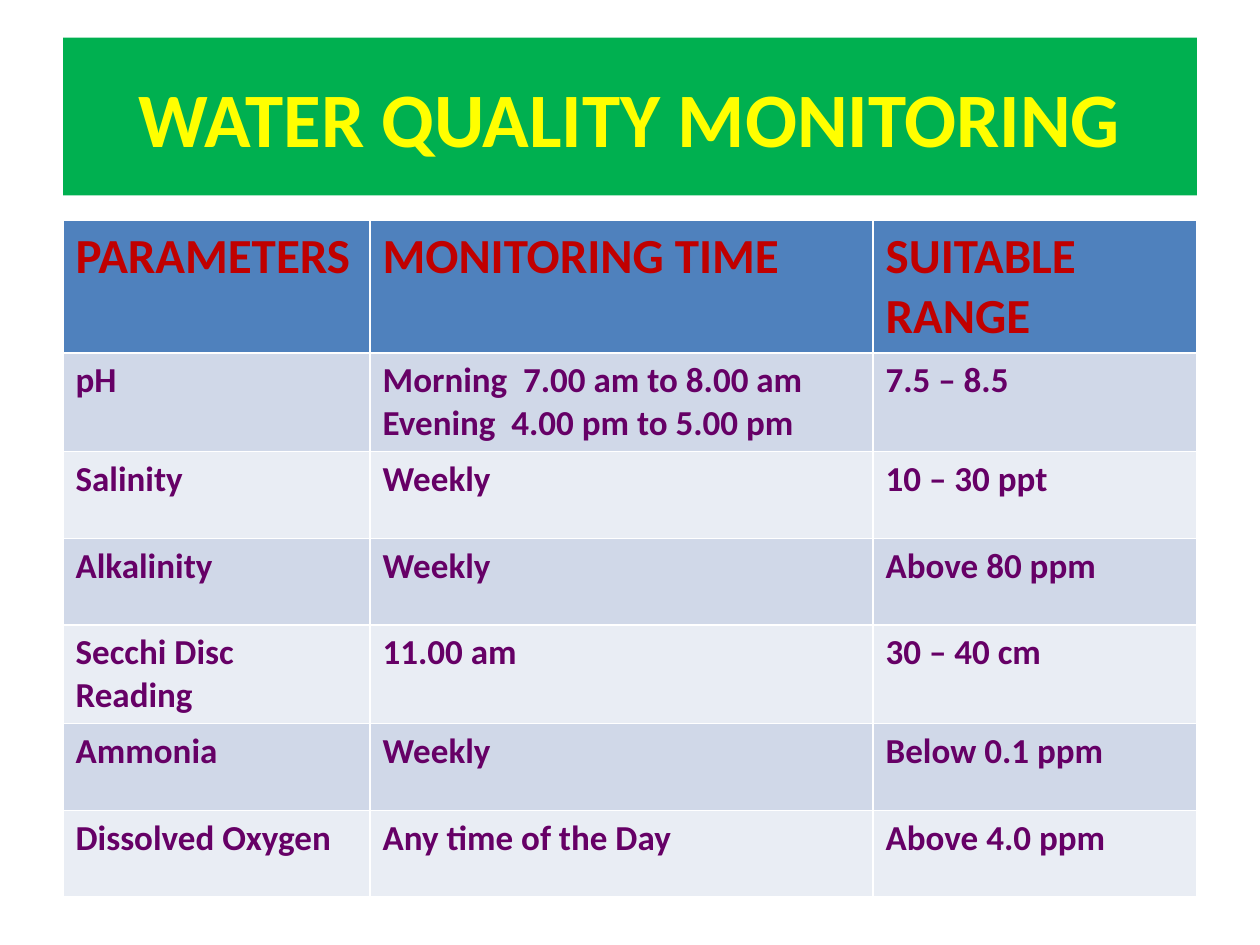
"""Build the water quality monitoring slide: a title band above a parameter table."""
from pptx import Presentation
from pptx.dml.color import RGBColor
from pptx.enum.text import MSO_ANCHOR, PP_ALIGN
from pptx.util import Cm, Pt

CENTER, MIDDLE = PP_ALIGN.CENTER, MSO_ANCHOR.MIDDLE
GREEN = RGBColor(0x00, 0xB0, 0x50)
YELLOW = RGBColor(0xFF, 0xFF, 0x00)
BLUE = RGBColor(0x4F, 0x81, 0xBD)
RED = RGBColor(0xC0, 0x00, 0x00)
PURPLE = RGBColor(0x66, 0x00, 0x66)
BANDS = [RGBColor(0xE9, 0xED, 0xF4), RGBColor(0xD0, 0xD8, 0xE8)]
FONT = "Calibri"

TITLE = "WATER QUALITY MONITORING"
ROWS = [
    ("PARAMETERS", "MONITORING TIME", "SUITABLE RANGE"),
    ("pH", "Morning  7.00 am to 8.00 am\nEvening  4.00 pm to 5.00 pm", "7.5 – 8.5"),
    ("Salinity", "Weekly", "10 – 30 ppt"),
    ("Alkalinity", "Weekly", "Above 80 ppm"),
    ("Secchi Disc Reading", "11.00 am", "30 – 40 cm"),
    ("Ammonia", "Weekly", "Below 0.1 ppm"),
    ("Dissolved Oxygen", "Any time of the Day", "Above 4.0 ppm"),
]
COL_WIDTHS = [6.19, 10.14, 6.53]
LEFT, WIDTH, ROW_HEIGHT = 1.27, sum(COL_WIDTHS), 1.75


def fill(obj, color):
    obj.fill.solid()
    obj.fill.fore_color.rgb = color


def style_text(tf, size, color):
    for p in tf.paragraphs:
        for r in p.runs:
            r.font.name = FONT
            r.font.size = Pt(size)
            r.font.bold = True
            r.font.color.rgb = color


def add_title(s):
    sp = s.shapes.title
    sp.left, sp.top, sp.width, sp.height = Cm(LEFT), Cm(0.76), Cm(WIDTH), Cm(3.18)
    fill(sp, GREEN)
    tf = sp.text_frame
    tf.text = TITLE
    tf.vertical_anchor = MIDDLE
    tf.paragraphs[0].alignment = CENTER
    style_text(tf, 44, YELLOW)


def add_parameter_table(s):
    table = s.shapes.add_table(
        len(ROWS), len(COL_WIDTHS), Cm(LEFT), Cm(4.45), Cm(WIDTH), Cm(ROW_HEIGHT * len(ROWS))
    ).table
    for column, width in zip(table.columns, COL_WIDTHS):
        column.width = Cm(width)
    for i, row in enumerate(ROWS):
        table.rows[i].height = Cm(ROW_HEIGHT)
        for j, text in enumerate(row):
            cell = table.cell(i, j)
            cell.text_frame.text = text
            fill(cell, BANDS[i % 2] if i else BLUE)
            style_text(cell.text_frame, 20 if i else 28, PURPLE if i else RED)


def main():
    prs = Presentation()
    prs.slide_width, prs.slide_height = Cm(25.4), Cm(19.05)
    s = prs.slides.add_slide(prs.slide_layouts[5])
    add_title(s)
    add_parameter_table(s)
    prs.save("out.pptx")


if __name__ == "__main__":
    main()
